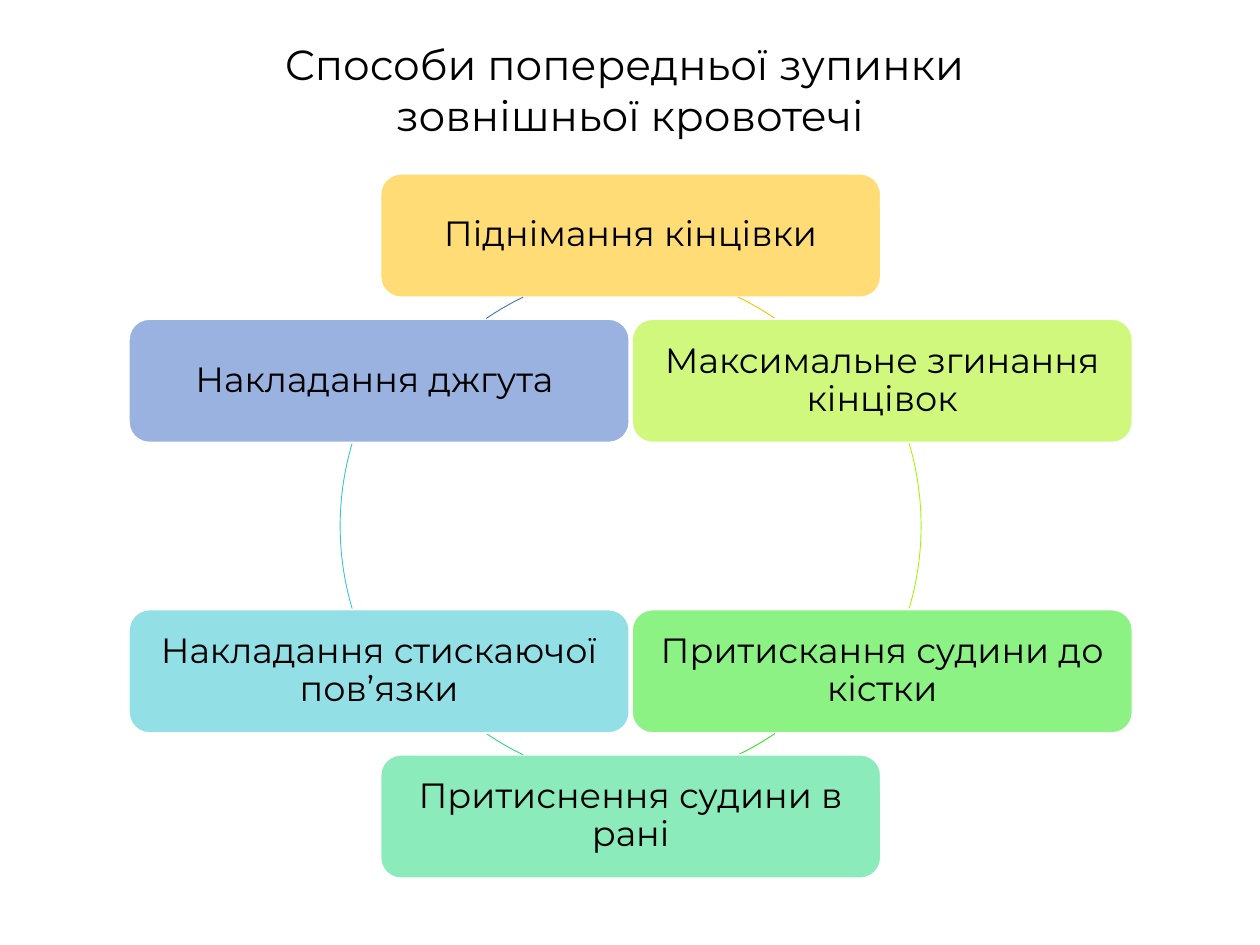
"""Build a slide with six ways to stop external bleeding arranged around a ring."""
from dataclasses import dataclass
from math import cos, radians, sin

from pptx import Presentation
from pptx import util as u
from pptx.dml.color import RGBColor
from pptx.enum import shapes, text
from pptx.oxml.ns import qn
from lxml import etree


@dataclass(frozen=True)
class Theme:
    font: str = "Montserrat"
    ink: str = "000000"
    edge: str = "FFFFFF"
    title_size: float = 24
    box_size: float = 20
    fill_alpha: int = 54


@dataclass(frozen=True)
class Ring:
    cx: float = 360.4
    cy: float = 300.6
    radius: float = 166
    box_w: float = 286
    box_h: float = 70.6
    inset: float = 6


@dataclass(frozen=True)
class Method:
    label: str
    color: str
    arc_half: float = 4.2
    arc_shift: float = 21.6


THEME = Theme()
RING = Ring()
TITLE = ("Способи попередньої зупинки ", "зовнішньої кровотечі")
METHODS = (
    Method("Піднімання кінцівки", "FFC000"),
    Method("Максимальне згинання кінцівок", "A7F30E", 16.5, 0),
    Method("Притискання судини до кістки", "2EE71C"),
    Method("Притиснення судини в рані", "29DB80"),
    Method("Накладання стискаючої пов’язки", "37C6CF", 16.5, 0),
    Method("Накладання джгута ", "4472C4"),
)


def add_run(p, words: str, size: float) -> None:
    """Add one styled run to a centred paragraph."""
    p.alignment = text.PP_ALIGN.CENTER
    r = p.add_run()
    r.text = words
    r.font.name = THEME.font
    r.font.size = u.Pt(size)
    r.font.color.rgb = RGBColor.from_string(THEME.ink)


def add_title(s) -> None:
    """Add the two-line heading."""
    sp = s.shapes.add_textbox(u.Pt(140.4), u.Pt(18.7), u.Pt(439.2), u.Pt(65.5))
    tf = sp.text_frame
    tf.word_wrap = False
    for i, line in enumerate(TITLE):
        p = tf.add_paragraph() if i else tf.paragraphs[0]
        add_run(p, line, THEME.title_size)


def add_box(s, method: Method, angle: float) -> None:
    """Add a translucent labelled box centred on the ring."""
    x = RING.cx + RING.radius * cos(radians(angle)) - RING.box_w / 2
    y = RING.cy + RING.radius * sin(radians(angle)) - RING.box_h / 2
    sp = s.shapes.add_shape(shapes.MSO_SHAPE.ROUNDED_RECTANGLE,
                            u.Pt(x), u.Pt(y), u.Pt(RING.box_w), u.Pt(RING.box_h))
    sp.shadow.inherit = False
    sp.fill.solid()
    sp.fill.fore_color.rgb = RGBColor.from_string(method.color)
    clr = sp.fill._xPr.find(qn("a:solidFill"))[0]
    etree.SubElement(clr, qn("a:alpha"), val=str(THEME.fill_alpha * 1000))
    sp.line.color.rgb = RGBColor.from_string(THEME.edge)
    sp.line.width = u.Pt(1)
    tf = sp.text_frame
    tf.word_wrap = True
    tf.vertical_anchor = text.MSO_ANCHOR.MIDDLE
    tf.margin_left = tf.margin_right = tf.margin_top = tf.margin_bottom = u.Pt(RING.inset)
    p = tf.paragraphs[0]
    p.line_spacing = 0.9
    add_run(p, method.label, THEME.box_size)


def add_arc(s, method: Method, angle: float) -> None:
    """Add the arc that leads on to the next box."""
    x = RING.cx - method.arc_shift * cos(radians(angle)) - RING.radius
    y = RING.cy - method.arc_shift * sin(radians(angle)) - RING.radius
    side = u.Pt(2 * RING.radius)
    sp = s.shapes.add_shape(shapes.MSO_SHAPE.ARC, u.Pt(x), u.Pt(y), side, side)
    sp.shadow.inherit = False
    sp.fill.background()
    sp.line.color.rgb = RGBColor.from_string(method.color)
    sp.line.width = u.Pt(0.5)
    for i, end in enumerate((angle - method.arc_half, angle + method.arc_half)):
        sp.adjustments[i] = end % 360 * 0.6


def main() -> None:
    """Build and save the slide."""
    prs = Presentation()
    prs.slide_width, prs.slide_height = u.Pt(720), u.Pt(540)
    s = prs.slides.add_slide(prs.slide_layouts[6])
    add_title(s)
    step = 360 / len(METHODS)
    for i, method in enumerate(METHODS):
        angle = -90 + i * step
        add_box(s, method, angle)
        add_arc(s, method, angle + step / 2)
    prs.save("out.pptx")


if __name__ == "__main__":
    main()
